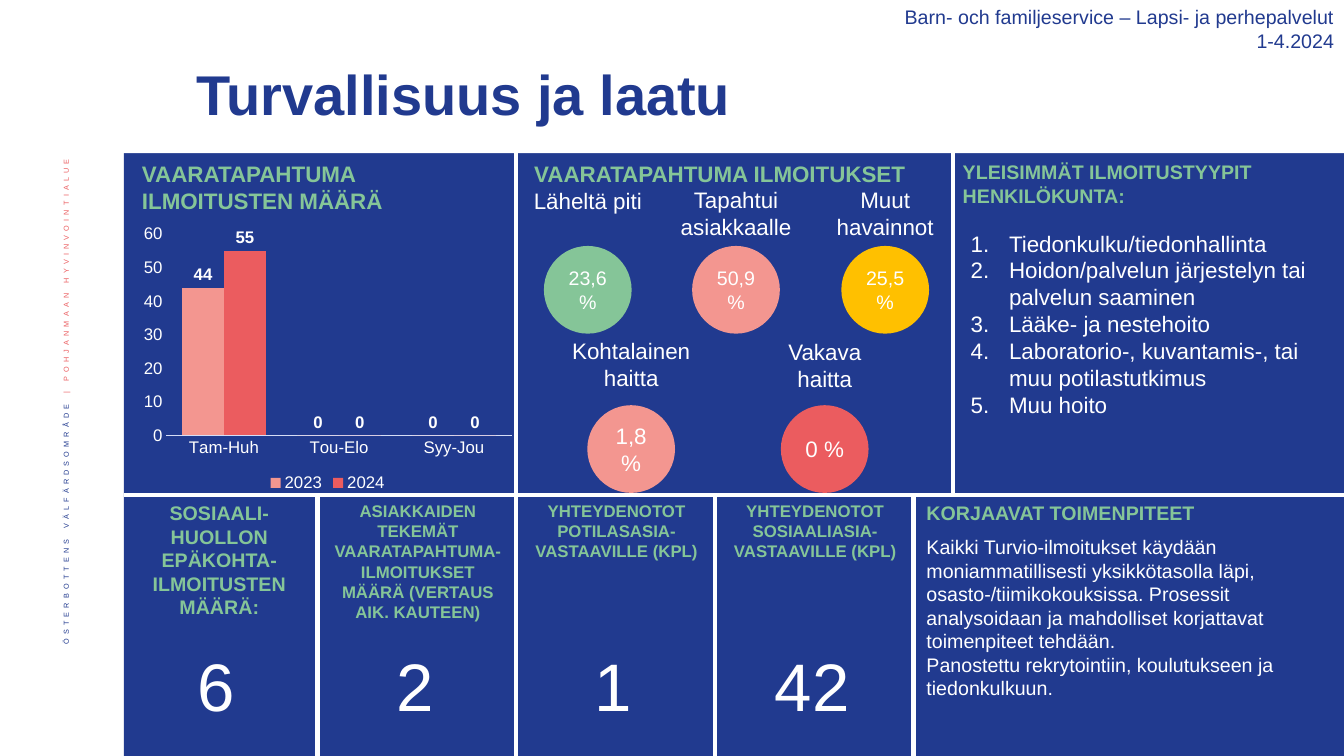
from lxml.etree import SubElement
from pptx import Presentation
from pptx.chart.data import CategoryChartData
from pptx.dml.color import RGBColor
from pptx.enum.chart import XL_CHART_TYPE, XL_LABEL_POSITION, XL_LEGEND_POSITION, XL_TICK_MARK
from pptx.enum.shapes import MSO_CONNECTOR, MSO_SHAPE
from pptx.enum.text import MSO_ANCHOR, PP_ALIGN
from pptx.oxml.ns import qn
from pptx.util import Inches, Pt

# Content
TITLE = "Turvallisuus ja laatu"
SERVICE = ["Barn- och familjeservice – Lapsi- ja perhepalvelut", "1-4.2024"]
REGION = [("ÖSTERBOTTENS VÄLFÄRDSOMRÅDE ", "navy"), ("| POHJANMAAN HYVINVOINTIALUE ", "red")]
CHART_HEADING = "VAARATAPAHTUMA ILMOITUSTEN MÄÄRÄ"
PERIODS = ["Tam-Huh", "Tou-Elo", "Syy-Jou"]
REPORTS = [("2023", (44, 0, 0), "salmon"), ("2024", (55, 0, 0), "red")]
SHARES_HEADING = "VAARATAPAHTUMA ILMOITUKSET"
# label, label width, value lines, colour, size, circle centre, label top, circle top
SHARES = [
    ("Läheltä piti", 1.28, ["23,6 %"], "green", "body", 5.83, 1.81, 2.44),
    ("Tapahtui asiakkaalle", 1.43, ["50,9", "%"], "salmon", "body", 7.3, 1.8, 2.44),
    ("Muut havainnot", 1.4, ["25,5", "%"], "amber", "body", 8.78, 1.8, 2.44),
    ("Kohtalainen haitta", 1.51, ["1,8 %"], "salmon", "large", 6.26, 3.3, 4.02),
    ("Vakava haitta", 1.28, ["0 %"], "red", "large", 8.18, 3.31, 4.02),
]
TYPES_HEADING = "YLEISIMMÄT ILMOITUSTYYPIT HENKILÖKUNTA:"
TYPES = [
    "Tiedonkulku/tiedonhallinta",
    "Hoidon/palvelun järjestelyn tai palvelun saaminen",
    "Lääke- ja nestehoito",
    "Laboratorio-, kuvantamis-, tai muu potilastutkimus",
    "Muu hoito",
]
INDICATORS = [
    ("SOSIAALI-HUOLLON EPÄKOHTA-ILMOITUSTEN MÄÄRÄ:", "6", "body"),
    ("ASIAKKAIDEN TEKEMÄT VAARATAPAHTUMA-ILMOITUKSET MÄÄRÄ (VERTAUS AIK. KAUTEEN)", "2", "small"),
    ("YHTEYDENOTOT POTILASASIA-VASTAAVILLE (KPL)", "1", "small"),
    ("YHTEYDENOTOT SOSIAALIASIA-VASTAAVILLE (KPL)", "42", "small"),
]
ACTIONS_HEADING = "KORJAAVAT TOIMENPITEET"
ACTIONS = [
    "Kaikki Turvio-ilmoitukset käydään moniammatillisesti\u00a0yksikkötasolla läpi, "
    "osasto-/tiimikokouksissa. Prosessit analysoidaan ja mahdolliset\u00a0korjattavat "
    "toimenpiteet tehdään.",
    "Panostettu rekrytointiin, koulutukseen ja tiedonkulkuun.",
]

# Theme and grid
THEME = {
    "font": "Arial",
    "colors": {"navy": "213A8F", "green": "85C598", "salmon": "F39690", "red": "EB5C5F",
               "amber": "FFC000", "white": "FFFFFF", "axis": "D6DDF6"},
    "sizes": {"side": 9, "small": 12, "body": 14, "large": 16, "title": 40, "figure": 48},
}
WIDTH, HEIGHT = 13.33, 7.5
PANEL_LEFT, HEADER_BOTTOM, ROW_LINE = 1.23, 1.52, 4.91
HEADING_TOP, COLUMN, CIRCLE = 1.54, 1.97, 0.87


def column_edge(index):
    return 1.18 + COLUMN * index


def color(name):
    return RGBColor.from_string(THEME["colors"][name])


def format_font(font, size, tint, bold=False):
    values = {"name": THEME["font"], "size": Pt(THEME["sizes"][size]), "bold": bold}
    for attribute, value in values.items():
        setattr(font, attribute, value)
    font.color.rgb = color(tint)


def fill_text(shape, lines, size, tint, bold=False, align=PP_ALIGN.LEFT,
              anchor=MSO_ANCHOR.TOP, numbered=False):
    frame = shape.text_frame
    frame.word_wrap = True
    frame.vertical_anchor = anchor
    for index, line in enumerate(lines):
        paragraph = frame.paragraphs[0] if index == 0 else frame.add_paragraph()
        paragraph.alignment = align
        if numbered:
            properties = paragraph._p.get_or_add_pPr()
            properties.set("marL", str(Inches(0.38)))
            properties.set("indent", str(-Inches(0.38)))
            SubElement(properties, qn("a:buFont"), typeface="+mj-lt")
            SubElement(properties, qn("a:buAutoNum"), type="arabicPeriod")
        run = paragraph.add_run()
        run.text = line
        format_font(run.font, size, tint, bold)
    return frame


def add_text(slide, box, lines, size, tint, **options):
    shape = slide.shapes.add_textbox(*map(Inches, box))
    return fill_text(shape, lines, size, tint, **options)


def add_filled(slide, kind, box, tint):
    shape = slide.shapes.add_shape(kind, *map(Inches, box))
    shape.shadow.inherit = False
    shape.fill.solid()
    shape.fill.fore_color.rgb = color(tint)
    shape.line.fill.background()
    return shape


def add_divider(slide, *ends):
    line = slide.shapes.add_connector(MSO_CONNECTOR.STRAIGHT, *map(Inches, ends))
    line.line.color.rgb = color("white")
    line.line.width = Pt(3)
    SubElement(line._element.spPr, qn("a:effectLst"))


def add_background(slide):
    add_filled(slide, MSO_SHAPE.RECTANGLE, (PANEL_LEFT, 0, WIDTH - PANEL_LEFT, HEIGHT), "navy")
    add_filled(slide, MSO_SHAPE.RECTANGLE, (1.15, 0, WIDTH - 1.15, HEADER_BOTTOM), "white")
    add_divider(slide, PANEL_LEFT, ROW_LINE, WIDTH, ROW_LINE)
    for edge in (column_edge(2), 9.45):
        add_divider(slide, edge, HEADER_BOTTOM, edge, ROW_LINE)
    for index in range(1, 5):
        add_divider(slide, column_edge(index), ROW_LINE, column_edge(index), HEIGHT)


def add_region(slide):
    frame = add_text(slide, (0.42, 1.42, 0.52, 5.73), [], "side", "navy", anchor=MSO_ANCHOR.MIDDLE)
    frame._txBody.bodyPr.set("vert", "vert270")
    paragraph = frame.paragraphs[0]
    paragraph.alignment = PP_ALIGN.RIGHT
    paragraph.line_spacing = 0.9
    for words, tint in REGION:
        run = paragraph.add_run()
        run.text = words
        format_font(run.font, "side", tint)
        properties = run._r.get_or_add_rPr()
        properties.set("baseline", "30000")
        properties.set("spc", "300")


def add_report_chart(slide):
    data = CategoryChartData()
    data.categories = PERIODS
    for name, values, _ in REPORTS:
        data.add_series(name, values)
    chart = slide.shapes.add_chart(XL_CHART_TYPE.COLUMN_CLUSTERED,
                                   *map(Inches, (1.35, 2.18, 3.8, 2.74)), data).chart
    format_font(chart.font, "small", "white")
    chart.has_title = False
    chart.has_legend = True
    chart.legend.position = XL_LEGEND_POSITION.BOTTOM
    chart.legend.include_in_layout = False
    format_font(chart.legend.font, "small", "white")
    for axis in (chart.category_axis, chart.value_axis):
        axis.major_tick_mark = axis.minor_tick_mark = XL_TICK_MARK.NONE
        axis.has_major_gridlines = False
        format_font(axis.tick_labels.font, "small", "white")
    chart.category_axis.format.line.color.rgb = color("axis")
    chart.category_axis.format.line.width = Pt(0.75)
    scale = {"minimum_scale": 0, "maximum_scale": 60, "major_unit": 10}
    for attribute, value in scale.items():
        setattr(chart.value_axis, attribute, value)
    chart.value_axis.format.line.fill.background()
    plot = chart.plots[0]
    plot.gap_width, plot.overlap, plot.vary_by_categories = 75, 0, False
    for series, (_, _, tint) in zip(plot.series, REPORTS):
        series.format.fill.solid()
        series.format.fill.fore_color.rgb = color(tint)
        series.data_labels.show_value = True
        series.data_labels.position = XL_LABEL_POSITION.OUTSIDE_END
        format_font(series.data_labels.font, "small", "white", True)


def main():
    presentation = Presentation()
    presentation.slide_width, presentation.slide_height = Inches(WIDTH), Inches(HEIGHT)
    slide = presentation.slides.add_slide(presentation.slide_layouts[6])
    add_background(slide)

    # Header and side text
    add_region(slide)
    title = add_text(slide, (1.85, 0.47, 9.98, 0.99), [TITLE], "title", "navy", bold=True,
                     anchor=MSO_ANCHOR.MIDDLE)
    title.paragraphs[0].line_spacing = 0.9
    add_text(slide, (7.55, 0, 5.78, 0.57), SERVICE, "body", "navy", align=PP_ALIGN.RIGHT)

    # Upper row: report counts, shares and common types
    add_text(slide, (1.31, HEADING_TOP, 2.7, 0.64), [CHART_HEADING], "large", "green", bold=True)
    add_report_chart(slide)
    add_text(slide, (5.2, HEADING_TOP, 4.24, 0.37), [SHARES_HEADING], "large", "green", bold=True)
    for label, width, value, tint, size, center, label_top, circle_top in SHARES:
        add_text(slide, (center - width / 2, label_top, width, 0.64), [label], "large", "white",
                 align=PP_ALIGN.CENTER)
        circle = add_filled(slide, MSO_SHAPE.OVAL,
                            (center - CIRCLE / 2, circle_top, CIRCLE, CIRCLE), tint)
        fill_text(circle, value, size, "white", align=PP_ALIGN.CENTER, anchor=MSO_ANCHOR.MIDDLE)
    add_text(slide, (9.45, HEADING_TOP, 3.88, 0.57), [TYPES_HEADING], "body", "green", bold=True)
    add_text(slide, (9.53, 2.23, 3.74, 2.29), TYPES, "large", "white", numbered=True)

    # Lower row: indicators and corrective actions
    for index, (heading, figure, size) in enumerate(INDICATORS):
        left = column_edge(index)
        add_text(slide, (left + 0.04, 4.92, 1.91, 1.3), [heading], size, "green", bold=True,
                 align=PP_ALIGN.CENTER)
        add_text(slide, (left - 0.02, 6.34, COLUMN, 0.91), [figure], "figure", "white",
                 align=PP_ALIGN.CENTER)
    add_text(slide, (9.09, 4.92, 4.19, 0.34), [ACTIONS_HEADING], "body", "green", bold=True)
    add_text(slide, (9.09, 5.26, 4.19, 1.51), ACTIONS, "body", "white")
    presentation.save("out.pptx")


if __name__ == "__main__":
    main()
